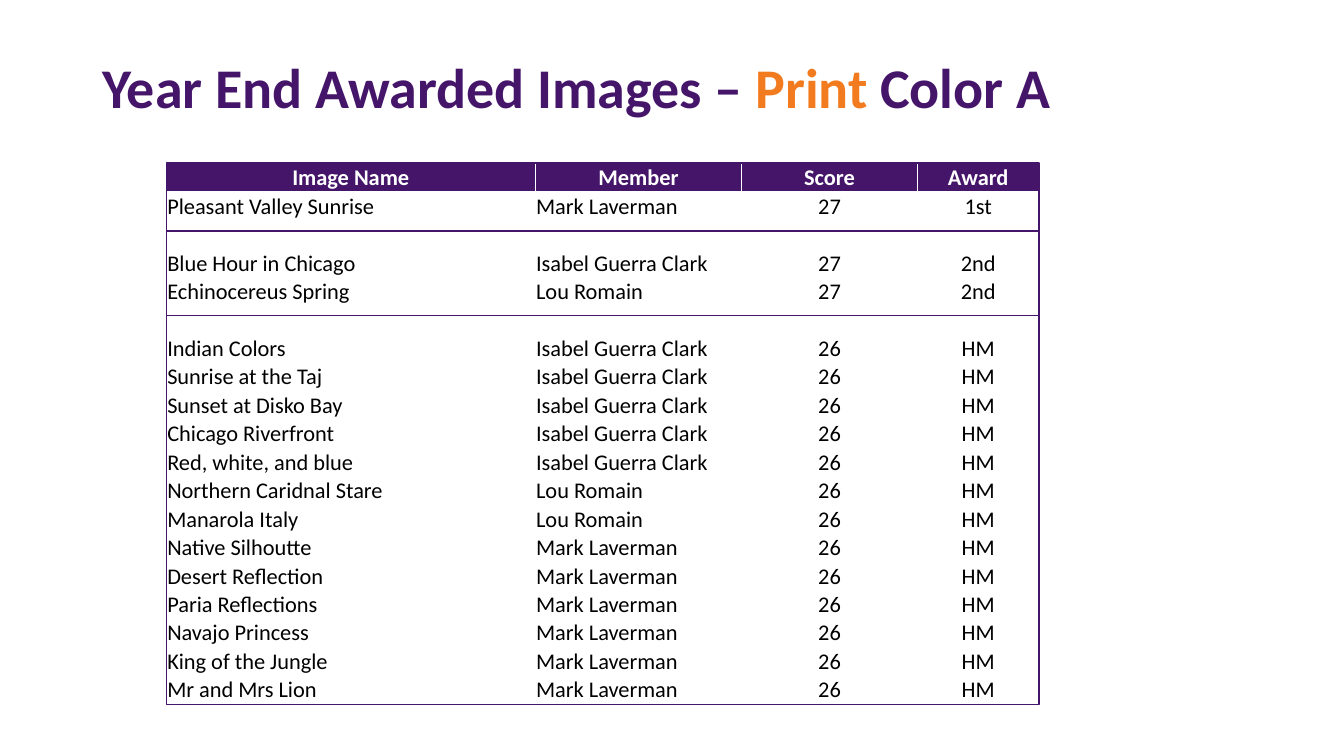
from dataclasses import dataclass
from typing import NamedTuple

from lxml import etree
from pptx import Presentation
from pptx import util as u
from pptx.dml.color import RGBColor
from pptx.enum import shapes, text
from pptx.oxml import ns


@dataclass(frozen=True)
class Theme:
    font: str = "Calibri"
    purple: RGBColor = RGBColor(0x45, 0x15, 0x6A)
    orange: RGBColor = RGBColor(0xF3, 0x7B, 0x1F)
    white: RGBColor = RGBColor(0xFF, 0xFF, 0xFF)
    black: RGBColor = RGBColor(0, 0, 0)
    title_size: float = 40
    table_size: float = 16
    line_width: float = 1


class Column(NamedTuple):
    heading: str
    width: float
    align: text.PP_ALIGN


class Entry(NamedTuple):
    image: str
    member: str
    score: str
    award: str


THEME = Theme()
LEFT, TOP, ROW_HEIGHT = 118.8, 116.6, 20.35
RULE_TOPS = (164.9, 225.4)
COLUMNS = (
    Column("Image Name", 263.5, text.PP_ALIGN.LEFT),
    Column("Member", 147.6, text.PP_ALIGN.LEFT),
    Column("Score", 125.3, text.PP_ALIGN.CENTER),
    Column("Award", 87.1, text.PP_ALIGN.CENTER),
)
WIDTH = sum(column.width for column in COLUMNS)
ISABEL, LOU, MARK = "Isabel Guerra Clark", "Lou Romain", "Mark Laverman"
GAP = Entry("", "", "", "")
HONORABLE_MENTIONS = (
    ("Indian Colors", ISABEL),
    ("Sunrise at the Taj", ISABEL),
    ("Sunset at Disko Bay", ISABEL),
    ("Chicago Riverfront", ISABEL),
    ("Red, white, and blue", ISABEL),
    ("Northern Caridnal Stare", LOU),
    ("Manarola Italy", LOU),
    ("Native Silhoutte", MARK),
    ("Desert Reflection", MARK),
    ("Paria Reflections", MARK),
    ("Navajo Princess", MARK),
    ("King of the Jungle", MARK),
    ("Mr and Mrs Lion", MARK),
)
ENTRIES = (
    Entry("Pleasant Valley Sunrise", MARK, "27", "1st"),
    GAP,
    Entry("Blue Hour in Chicago", ISABEL, "27", "2nd"),
    Entry("Echinocereus Spring", LOU, "27", "2nd"),
    GAP,
    *(Entry(image, member, "26", "HM") for image, member in HONORABLE_MENTIONS),
)


def style_font(font, size: float, color: RGBColor, bold: bool) -> None:
    font.name, font.size, font.bold = THEME.font, u.Pt(size), bold
    font.color.rgb = color


def add_title(slide) -> None:
    frame = slide.shapes.add_textbox(u.Pt(66), u.Pt(28.8), u.Pt(828), u.Pt(71.3)).text_frame
    frame.word_wrap = True
    frame.vertical_anchor = text.MSO_ANCHOR.MIDDLE
    paragraph = frame.paragraphs[0]
    paragraph.line_spacing = 0.9
    for words, color in (
        ("Year End Awarded Images – ", THEME.purple),
        ("Print", THEME.orange),
        (" Color A", THEME.purple),
    ):
        run = paragraph.add_run()
        run.text = words
        style_font(run.font, THEME.title_size, color, True)


def add_borders(cell) -> None:
    properties = cell._tc.get_or_add_tcPr()
    for index, side in enumerate(("lnL", "lnR", "lnT", "lnB")):
        border = etree.Element(ns.qn(f"a:{side}"), w=str(u.Pt(THEME.line_width)))
        fill = etree.SubElement(border, ns.qn("a:solidFill"))
        etree.SubElement(fill, ns.qn("a:srgbClr"), val=str(THEME.white))
        properties.insert(index, border)


def fill_cell(cell, words: str, column: Column, heading: bool) -> None:
    cell.margin_left = cell.margin_right = cell.margin_top = u.Pt(0.7)
    cell.margin_bottom = 0
    cell.vertical_anchor = text.MSO_ANCHOR.BOTTOM
    paragraph = cell.text_frame.paragraphs[0]
    paragraph.alignment = text.PP_ALIGN.CENTER if heading else column.align
    color = THEME.white if heading else THEME.black
    style_font(paragraph.font, THEME.table_size, color, heading)
    if words:
        paragraph.add_run().text = words
    else:  # an empty paragraph takes its height from its end mark
        etree.SubElement(paragraph._p, ns.qn("a:endParaRPr"), sz=str(int(THEME.table_size * 100)))
    if heading:
        cell.fill.solid()
        cell.fill.fore_color.rgb = THEME.purple
    else:
        cell.fill.background()
    add_borders(cell)


def add_awards(slide) -> None:
    rows = (Entry(*(column.heading for column in COLUMNS)), *ENTRIES)
    height = ROW_HEIGHT * len(rows)
    table = slide.shapes.add_table(
        len(rows), len(COLUMNS), u.Pt(LEFT), u.Pt(TOP), u.Pt(WIDTH), u.Pt(height)
    ).table
    table.horz_banding = False
    for index, column in enumerate(COLUMNS):
        table.columns[index].width = u.Pt(column.width)
    for row_index, entry in enumerate(rows):
        table.rows[row_index].height = u.Pt(ROW_HEIGHT)
        for column_index, words in enumerate(entry):
            cell = table.cell(row_index, column_index)
            fill_cell(cell, words, COLUMNS[column_index], row_index == 0)

    # Frame around the table
    frame = slide.shapes.add_shape(
        shapes.MSO_SHAPE.RECTANGLE, u.Pt(LEFT), u.Pt(TOP), u.Pt(WIDTH), u.Pt(height)
    )
    frame.shadow.inherit = False
    frame.fill.background()
    frame.line.color.rgb = THEME.purple
    frame.line.width = u.Pt(THEME.line_width)


def add_rule(slide, top: float) -> None:
    rule = slide.shapes.add_connector(
        shapes.MSO_CONNECTOR.STRAIGHT, u.Pt(LEFT), u.Pt(top), u.Pt(LEFT + WIDTH), u.Pt(top)
    )
    rule.line.color.rgb = THEME.purple
    rule.line.width = u.Pt(THEME.line_width)
    etree.SubElement(rule._element.spPr, ns.qn("a:effectLst"))


def main() -> None:
    presentation = Presentation()
    presentation.slide_width, presentation.slide_height = u.Pt(960), u.Pt(540)
    slide = presentation.slides.add_slide(presentation.slide_layouts[6])
    add_title(slide)
    add_awards(slide)
    # Rules between the award groups
    for top in RULE_TOPS:
        add_rule(slide, top)
    presentation.save("out.pptx")


if __name__ == "__main__":
    main()
